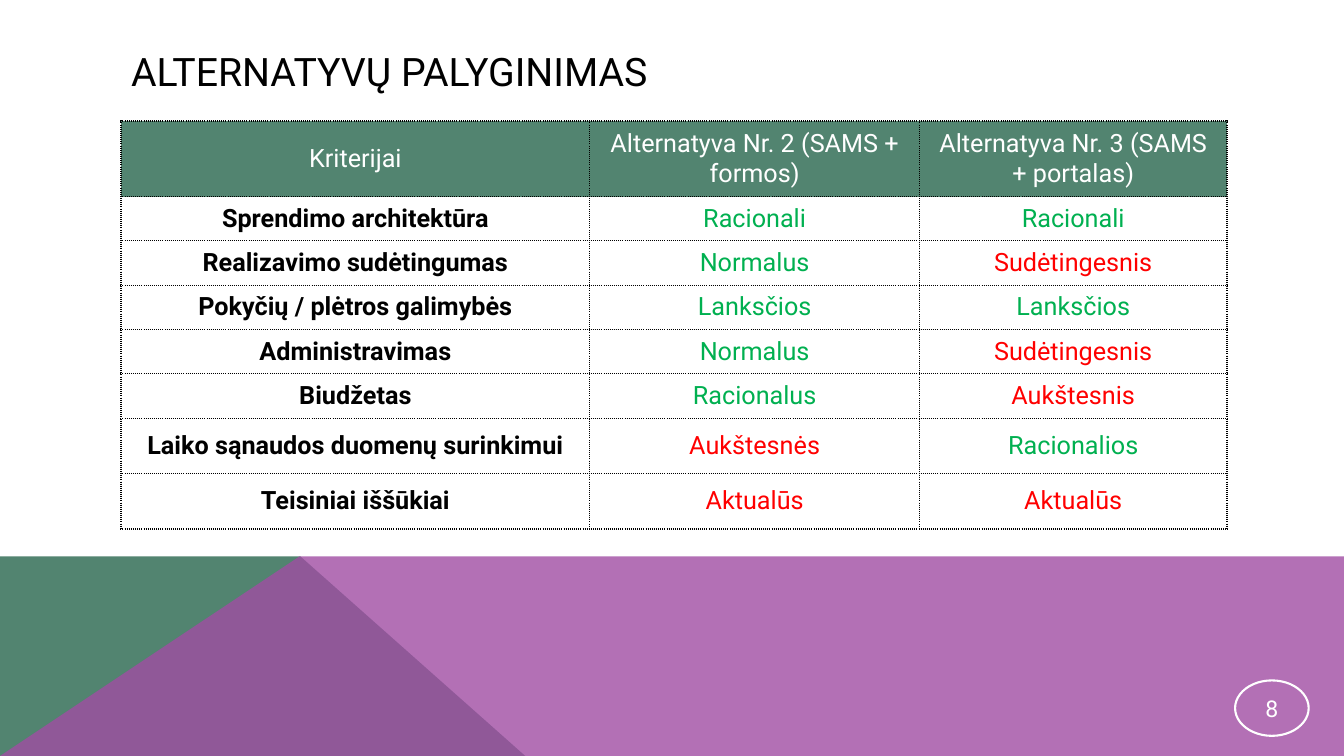
import pptx
import pptx.dml.color
import pptx.enum.shapes
import pptx.enum.text
import pptx.oxml
import pptx.oxml.ns
import pptx.util
from lxml import etree

Inches = pptx.util.Inches
ALIGN = pptx.enum.text.PP_ALIGN
MIDDLE = pptx.enum.text.MSO_ANCHOR.MIDDLE

GREEN, PURPLE = "528470", "A04DA3"
WHITE, BLACK = "FFFFFF", "000000"
GOOD, BAD = "00B050", "FF0000"

HEADER = ["Kriterijai", "Alternatyva Nr. 2 (SAMS + formos)", "Alternatyva Nr. 3 (SAMS + portalas)"]
CRITERIA = [
    ("Sprendimo architektūra", ("Racionali", GOOD), ("Racionali", GOOD)),
    ("Realizavimo sudėtingumas", ("Normalus", GOOD), ("Sudėtingesnis", BAD)),
    ("Pokyčių / plėtros galimybės", ("Lanksčios", GOOD), ("Lanksčios", GOOD)),
    ("Administravimas", ("Normalus", GOOD), ("Sudėtingesnis", BAD)),
    ("Biudžetas", ("Racionalus", GOOD), ("Aukštesnis", BAD)),
    ("Laiko sąnaudos duomenų surinkimui", ("Aukštesnės", BAD), ("Racionalios", GOOD)),
    ("Teisiniai iššūkiai", ("Aktualūs", BAD), ("Aktualūs", BAD)),
]
COLUMN_WIDTHS = [4.65, 3.27, 3.05]
ROW_HEIGHTS = [0.75] + [0.44] * 5 + [0.55] * 2


def color(value):
    return pptx.dml.color.RGBColor.from_string(value)


class SlideBuilder:
    """Holds the font and the current slide."""

    def __init__(self, slide, font="Roboto"):
        self.slide = slide
        self.font = font

    def add_text(self, frame, text, size, text_color, align=ALIGN.CENTER, bold=False):
        frame.word_wrap = True
        paragraph = frame.paragraphs[0]
        paragraph.alignment = align
        run = paragraph.add_run()
        run.text = text
        run.font.name = self.font
        run.font.size = pptx.util.Pt(size)
        run.font.bold = bold
        run.font.color.rgb = color(text_color)

    def title(self, text, left, top, width, height):
        title = self.slide.shapes.title
        title.left, title.top = Inches(left), Inches(top)
        title.width, title.height = Inches(width), Inches(height)
        title.text_frame.vertical_anchor = MIDDLE
        self.add_text(title.text_frame, text, 28, BLACK, ALIGN.LEFT)

    def polygon(self, points, fill, opacity=100):
        corners = [(Inches(x), Inches(y)) for x, y in points]
        builder = self.slide.shapes.build_freeform(*corners[0])
        builder.add_line_segments(corners[1:], close=True)
        shape = builder.convert_to_shape()
        shape.shadow.inherit = False
        shape.line.fill.background()
        shape.fill.solid()
        shape.fill.fore_color.rgb = color(fill)
        if opacity < 100:
            fill_color = shape.element.spPr.find(".//" + pptx.oxml.ns.qn("a:srgbClr"))
            alpha = etree.SubElement(fill_color, pptx.oxml.ns.qn("a:alpha"))
            alpha.set("val", str(opacity * 1000))

    def borders(self, cell):
        properties = cell._tc.get_or_add_tcPr()
        for side in ("lnL", "lnR", "lnT", "lnB"):
            properties.append(pptx.oxml.parse_xml(
                f'<a:{side} {pptx.oxml.ns.nsdecls("a")} w="12700"><a:solidFill>'
                f'<a:srgbClr val="{BLACK}"/></a:solidFill><a:prstDash val="sysDot"/></a:{side}>'))

    def cell(self, cell, text, text_color, bold=False, fill=None):
        cell.vertical_anchor = MIDDLE
        self.borders(cell)
        if fill:
            cell.fill.solid()
            cell.fill.fore_color.rgb = color(fill)
        else:
            cell.fill.background()
        self.add_text(cell.text_frame, text, 18, text_color, bold=bold)

    def table(self, left, top, header, criteria, widths, heights):
        table = self.slide.shapes.add_table(
            len(heights), len(widths), Inches(left), Inches(top),
            Inches(sum(widths)), Inches(sum(heights))).table
        table.horz_banding = False
        for column, width in zip(table.columns, widths):
            column.width = Inches(width)
        for row, height in zip(table.rows, heights):
            row.height = Inches(height)
        for index, text in enumerate(header):
            self.cell(table.cell(0, index), text, WHITE, fill=GREEN)
        for row, (criterion, *ratings) in enumerate(criteria, start=1):
            self.cell(table.cell(row, 0), criterion, BLACK, bold=True)
            for column, (rating, rating_color) in enumerate(ratings, start=1):
                self.cell(table.cell(row, column), rating, rating_color)

    def page_number(self, text, left, top, width, height):
        shape = self.slide.shapes.add_shape(
            pptx.enum.shapes.MSO_SHAPE.OVAL,
            Inches(left), Inches(top), Inches(width), Inches(height))
        shape.shadow.inherit = False
        shape.fill.background()
        shape.line.color.rgb = color(WHITE)
        shape.line.width = pptx.util.Pt(1.5)
        frame = shape.text_frame
        frame.margin_left = frame.margin_right = Inches(0.01)
        frame.margin_top = frame.margin_bottom = Inches(0.01)
        frame.vertical_anchor = MIDDLE
        self.add_text(frame, text, 16.5, WHITE)


def main():
    presentation = pptx.Presentation()
    presentation.slide_width = Inches(13.33)
    presentation.slide_height = Inches(7.5)
    slide = presentation.slides.add_slide(presentation.slide_layouts[5])
    builder = SlideBuilder(slide)

    # Bottom band
    builder.polygon([(0, 7.5), (0, 5.52), (2.98, 5.52), (5.21, 7.5)], GREEN)
    builder.polygon([(0, 7.5), (2.97, 5.52), (13.33, 5.52), (13.33, 7.5)], PURPLE, opacity=80)

    # Title and comparison table
    builder.title("ALTERNATYVŲ PALYGINIMAS", 1.2, 0.4, 10.97, 0.6)
    builder.table(1.2, 1.2, HEADER, CRITERIA, COLUMN_WIDTHS, ROW_HEIGHTS)

    # Page number
    builder.page_number("8", 12.25, 6.75, 0.73, 0.55)

    presentation.save("out.pptx")


if __name__ == "__main__":
    main()
